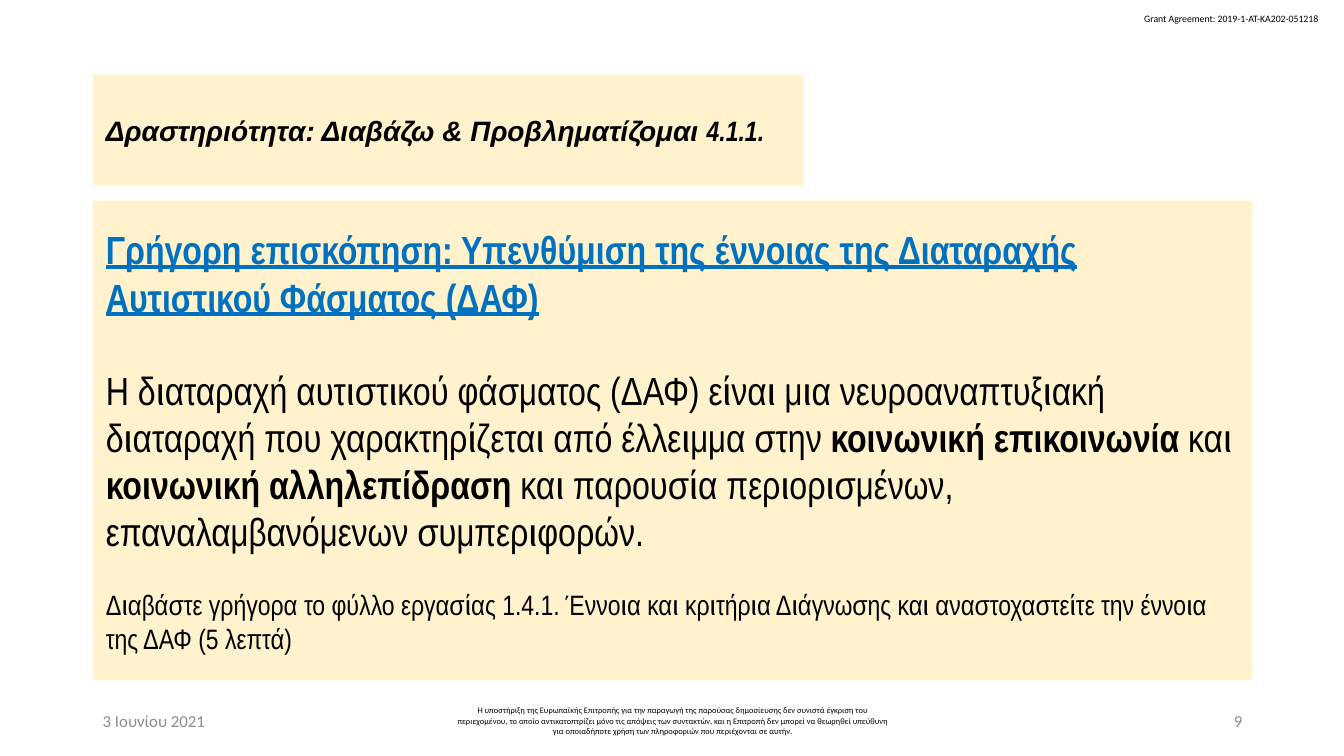
from lxml import etree
from pptx import Presentation
from pptx.dml.color import RGBColor
from pptx.enum.text import MSO_ANCHOR, MSO_AUTO_SIZE, PP_ALIGN
from pptx.oxml.ns import qn
from pptx.util import Pt

PX = 9144  # 100 px to the inch
LEFT, CENTER, RIGHT = PP_ALIGN.LEFT, PP_ALIGN.CENTER, PP_ALIGN.RIGHT
TOP, MIDDLE = MSO_ANCHOR.TOP, MSO_ANCHOR.MIDDLE
NO_FIT = MSO_AUTO_SIZE.NONE

CREAM, BLACK, GREY, BLUE = "FFF2CC", "000000", "8C8C8C", "0070C0"
NARROW = "Arial Narrow"
PLAIN = {"name": NARROW, "size": 28, "color": BLACK, "bold": False}
BOLD = PLAIN | {"bold": True}
HEADING = BOLD | {"color": BLUE, "underline": True}
TASK = PLAIN | {"size": 20}
ACTIVITY = {"name": "Arial", "size": 20, "color": BLACK, "bold": True, "italic": True}

GRANT = "Grant Agreement: 2019-1-AT-KA202-051218"
DATE = "3 Ιουνίου 2021"
DISCLAIMER = (
    "Η υποστήριξη της Ευρωπαϊκής Επιτροπής για την παραγωγή της παρούσας "
    "δημοσίευσης δεν συνιστά έγκριση του περιεχομένου, το οποίο αντικατοπτρίζει "
    "μόνο τις απόψεις των συντακτών, και η Επιτροπή δεν μπορεί να θεωρηθεί υπεύθυνη "
    "για οποιαδήποτε χρήση των πληροφοριών που περιέχονται σε αυτήν."
)
TITLE_RUNS = [
    ("Δραστηριότητα: Διαβάζω & Προβληματίζομαι ", ACTIVITY),
    ("4.1.1.", ACTIVITY | {"name": NARROW}),
]
# Each paragraph: space before in points, runs
OVERVIEW = [
    (0, [("Γρήγορη επισκόπηση: Υπενθύμιση της έννοιας της Διαταραχής "
          "Αυτιστικού Φάσματος (ΔΑΦ)", HEADING)]),
    (33, [
        ("Η διαταραχή αυτιστικού φάσματος (ΔΑΦ) είναι μια νευροαναπτυξιακή "
         "διαταραχή που χαρακτηρίζεται από έλλειμμα στην ", PLAIN),
        ("κοινωνική επικοινωνία ", BOLD),
        ("και ", PLAIN),
        ("κοινωνική αλληλεπίδραση ", BOLD),
        ("και παρουσία περιορισμένων, επαναλαμβανόμενων συμπεριφορών.", PLAIN),
    ]),
    (24, [("Διαβάστε γρήγορα το φύλλο εργασίας 1.4.1. Έννοια και κριτήρια Διάγνωσης "
           "και αναστοχαστείτε την έννοια της ΔΑΦ (5 λεπτά)", TASK)]),
]


def rgb(color):
    return RGBColor.from_string(color)


def add_runs(paragraph, runs):
    for text, style in runs:
        run = paragraph.add_run()
        run.text = text
        for key, value in style.items():
            if key == "color":
                run.font.color.rgb = rgb(value)
            else:
                setattr(run.font, key, Pt(value) if key == "size" else value)


def fill_panel(panel, box, paragraphs):
    """Turn a placeholder into a cream panel with unbulleted paragraphs."""
    panel.left, panel.top, panel.width, panel.height = (n * PX for n in box)
    panel.fill.solid()
    panel.fill.fore_color.rgb = rgb(CREAM)
    frame = panel.text_frame
    settings = {"word_wrap": True, "auto_size": NO_FIT, "vertical_anchor": MIDDLE,
                "margin_left": 13 * PX, "margin_right": 13 * PX,
                "margin_top": 7 * PX, "margin_bottom": 7 * PX}
    for key, value in settings.items():
        setattr(frame, key, value)
    for index, (space, runs) in enumerate(paragraphs):
        paragraph = frame.add_paragraph() if index else frame.paragraphs[0]
        properties = paragraph._p.get_or_add_pPr()
        properties.set("marL", "0")
        properties.set("indent", "0")
        etree.SubElement(properties, qn("a:buNone"))
        paragraph.alignment = LEFT
        paragraph.space_before = Pt(space)
        add_runs(paragraph, runs)


def add_note(slide, box, text, size, color, align=LEFT, anchor=MIDDLE, wrap=True):
    frame = slide.shapes.add_textbox(*(n * PX for n in box)).text_frame
    frame.word_wrap = wrap
    frame.vertical_anchor = anchor
    frame.paragraphs[0].alignment = align
    add_runs(frame.paragraphs[0],
             [(text, {"name": "Calibri", "size": size, "color": color})])


def add_footer(slide, box):
    left, top, width, height = box
    side, middle = 300, 450
    add_note(slide, (left, top, side, height), DATE, 12, GREY)
    add_note(slide, (left + (width - middle) // 2, top, middle, height),
             DISCLAIMER, 6, BLACK, CENTER)
    add_note(slide, (left + width - side, top, side, height), "9", 12, GREY, RIGHT)


def add_activity_slide(deck):
    slide = deck.slides.add_slide(deck.slide_layouts[1])
    add_note(slide, (1125, 8, 197, 22), GRANT, 7, BLACK, anchor=TOP, wrap=False)
    add_footer(slide, (92, 695, 1150, 40))
    fill_panel(slide.shapes.title, (92, 74, 705, 110), [(0, TITLE_RUNS)])
    fill_panel(slide.placeholders[1], (92, 199, 1150, 476), OVERVIEW)


def main():
    deck = Presentation()
    deck.slide_width, deck.slide_height = 1333 * PX, 750 * PX
    add_activity_slide(deck)
    deck.save("out.pptx")


if __name__ == "__main__":
    main()
